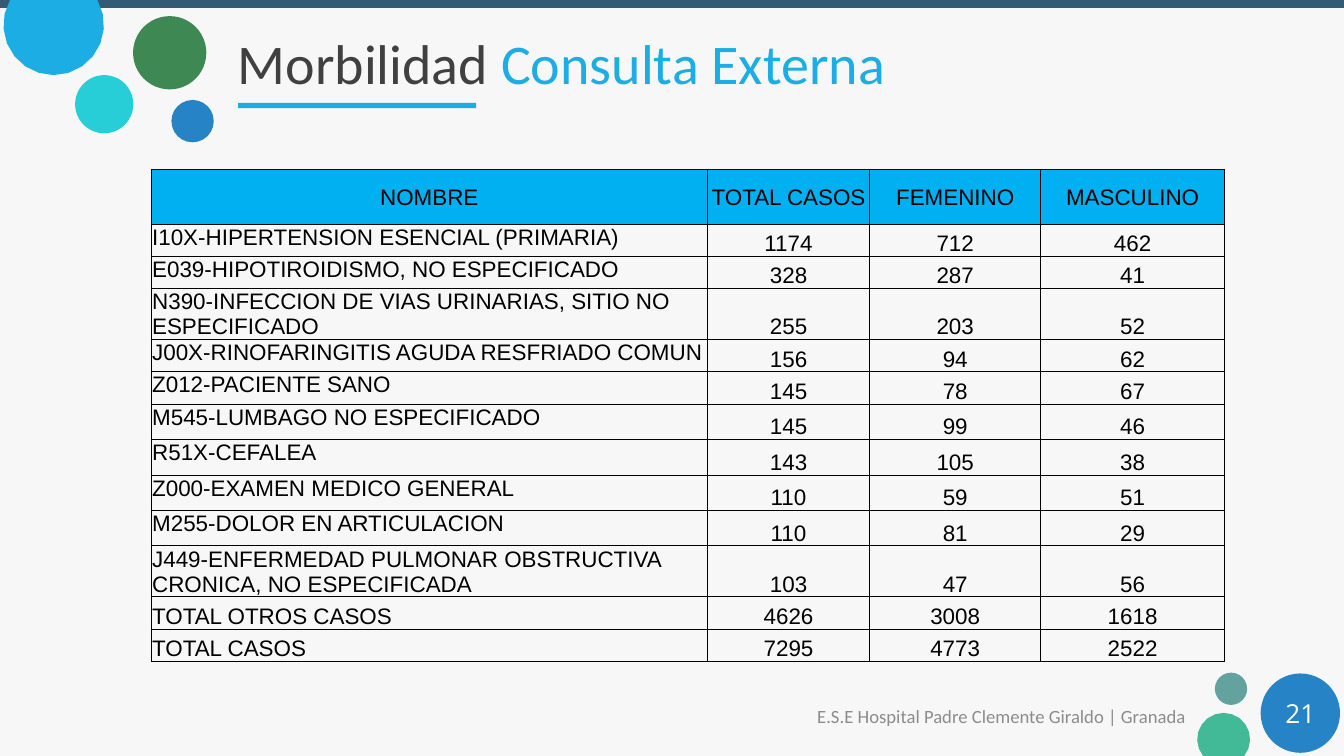
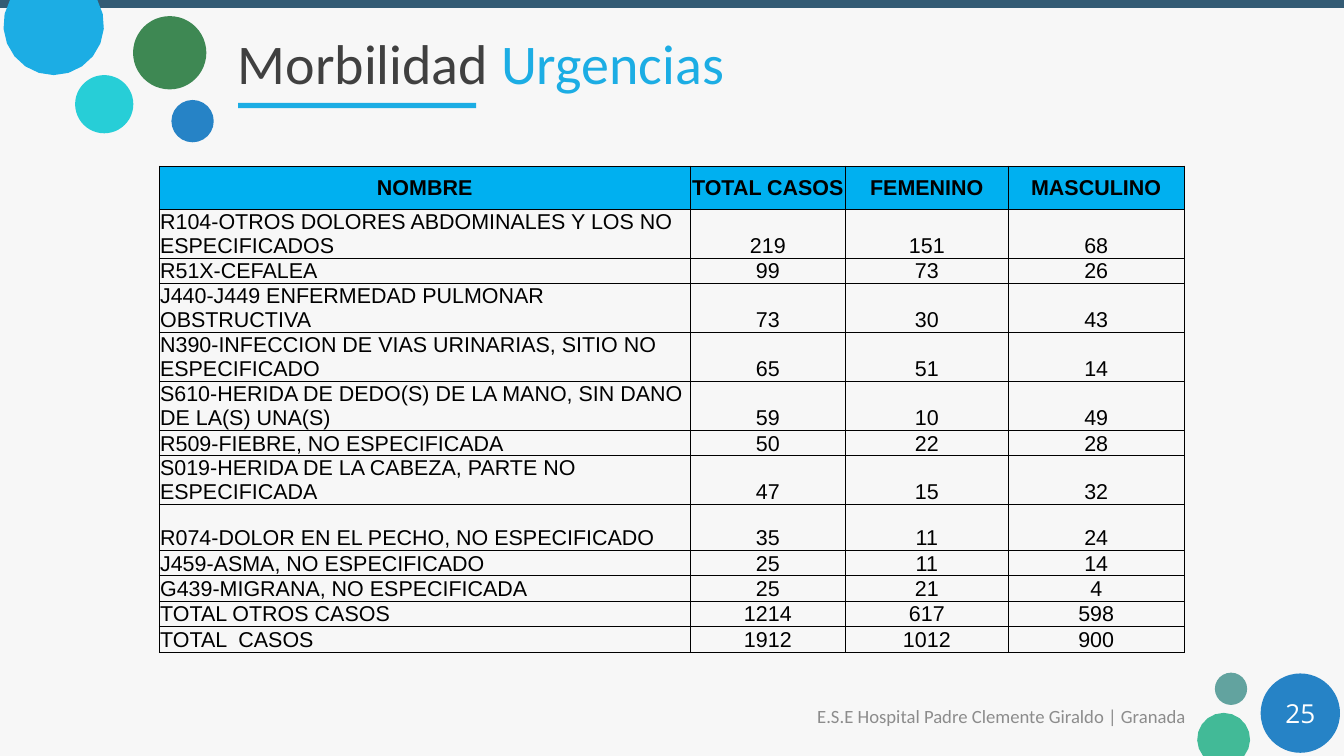
import math
from dataclasses import dataclass

import lxml.etree
import pptx
import pptx.dml.color
import pptx.enum.shapes
import pptx.enum.text
import pptx.oxml.ns
import pptx.util

Cm = pptx.util.Cm
Pt = pptx.util.Pt
qn = pptx.oxml.ns.qn
ALIGN = pptx.enum.text.PP_ALIGN
ANCHOR = pptx.enum.text.MSO_ANCHOR
SHAPE = pptx.enum.shapes.MSO_SHAPE


@dataclass(frozen=True)
class Theme:
    width: float = 50.8
    height: float = 28.58
    background: str = "F7F7F7"
    band: str = "335B74"
    sky: str = "1CADE4"
    blue: str = "2683C6"
    cyan: str = "27CED7"
    green: str = "3E8853"
    sage: str = "62A39F"
    mint: str = "42BA97"
    header: str = "00B0F0"
    title: str = "404040"
    footer: str = "8C8C8C"
    black: str = "000000"
    white: str = "FFFFFF"
    title_size: int = 60
    footer_size: int = 20
    number_size: int = 28
    heading_font: str = "Calibri"
    number_font: str = "Open Sans"
    table_font: str = "Arial"
    table_leading: float = 1.12


def rgb(color):
    return pptx.dml.color.RGBColor.from_string(color)


class Deck:
    """Builds slides that share one theme, keeping track of the current slide."""

    def __init__(self, theme):
        self.theme = theme
        self.presentation = pptx.Presentation()
        self.presentation.slide_width = Cm(theme.width)
        self.presentation.slide_height = Cm(theme.height)
        fill = self.presentation.slide_master.background.fill
        fill.solid()
        fill.fore_color.rgb = rgb(theme.background)
        self.slide = None

    def paint(self, shape, color):
        shape.shadow.inherit = False
        shape.fill.solid()
        shape.fill.fore_color.rgb = rgb(color)
        shape.line.fill.background()

    def shape(self, kind, left, top, width, height, color):
        shape = self.slide.shapes.add_shape(kind, Cm(left), Cm(top), Cm(width), Cm(height))
        self.paint(shape, color)

    def circle(self, left, top, diameter, color):
        self.shape(SHAPE.OVAL, left, top, diameter, diameter, color)

    def cut_circle(self, center_x, center_y, radius, edge, color, segments=14):
        start = math.asin((edge - center_y) / radius)
        sweep = math.pi - 2 * start if edge == 0 else -math.pi - 2 * start
        angles = [start + sweep * step / segments for step in range(segments + 1)]
        points = [(Cm(center_x + radius * math.cos(angle)),
                   Cm(center_y + radius * math.sin(angle))) for angle in angles]
        builder = self.slide.shapes.build_freeform(*points[0])
        builder.add_line_segments(points[1:], close=True)
        self.paint(builder.convert_to_shape(), color)

    def text(self, left, top, width, height, runs, size, font, align=ALIGN.LEFT):
        box = self.slide.shapes.add_textbox(Cm(left), Cm(top), Cm(width), Cm(height))
        frame = box.text_frame
        frame.word_wrap = True
        frame.vertical_anchor = ANCHOR.MIDDLE
        frame.margin_left = frame.margin_right = Cm(0.46)
        frame.margin_top = frame.margin_bottom = Cm(0.23)
        paragraph = frame.paragraphs[0]
        paragraph.alignment = align
        paragraph.font.size = Pt(size)
        paragraph.font.name = font
        for content, color in runs:
            run = paragraph.add_run()
            run.text = content
            run.font.color.rgb = rgb(color)

    def page(self, topic, number):
        theme = self.theme
        self.slide = self.presentation.slides.add_slide(self.presentation.slide_layouts[6])
        self.shape(SHAPE.RECTANGLE, 0, 0, theme.width, 0.3, theme.band)
        self.circle(6.48, 3.78, 1.6, theme.blue)
        self.cut_circle(2.03, 0.94, 1.9, 0, theme.sky)
        self.circle(2.84, 2.84, 2.2, theme.cyan)
        self.circle(5.03, 0.61, 2.77, theme.green)
        self.circle(45.92, 25.43, 1.22, theme.sage)
        self.circle(47.65, 25.46, 3, theme.blue)
        self.cut_circle(46.25, 27.95, 1, theme.height, theme.mint)
        self.shape(SHAPE.RECTANGLE, 9, 3.89, 9, 0.2, theme.sky)
        self.text(8.53, 0.69, 39.85, 3.35,
                  [("Morbilidad ", theme.title), (topic, theme.sky)],
                  theme.title_size, theme.heading_font)
        self.text(29.2, 26.31, 16.08, 1.52,
                  [("E.S.E Hospital Padre Clemente Giraldo | Granada", theme.footer)],
                  theme.footer_size, theme.heading_font, ALIGN.RIGHT)
        self.text(47.65, 26.21, 3, 1.52, [(str(number), theme.white)],
                  theme.number_size, theme.number_font, ALIGN.CENTER)

    def borders(self, cell):
        properties = cell._tc.get_or_add_tcPr()
        for index, side in enumerate(("a:lnL", "a:lnR", "a:lnT", "a:lnB")):
            line = lxml.etree.Element(qn(side), w=str(Pt(1)))
            fill = lxml.etree.SubElement(line, qn("a:solidFill"))
            lxml.etree.SubElement(fill, qn("a:srgbClr"), val=self.theme.black)
            properties.insert(index, line)

    def cell(self, cell, content, size, align, anchor, is_header, bold):
        cell.margin_left = cell.margin_right = cell.margin_top = Cm(0.03)
        cell.margin_bottom = 0
        cell.vertical_anchor = anchor
        if is_header:
            cell.fill.solid()
            cell.fill.fore_color.rgb = rgb(self.theme.header)
        else:
            cell.fill.background()
        self.borders(cell)
        cell.text = str(content)
        paragraph = cell.text_frame.paragraphs[0]
        paragraph.alignment = align
        paragraph.line_spacing = Pt(size * self.theme.table_leading)
        paragraph.font.size = Pt(size)
        paragraph.font.name = self.theme.table_font
        paragraph.font.bold = bold
        paragraph.font.color.rgb = rgb(self.theme.black)

    def table(self, left, top, widths, heights, cases, size, bold_header, name_anchor):
        rows = [("NOMBRE", "TOTAL CASOS", "FEMENINO", "MASCULINO"), *cases]
        table = self.slide.shapes.add_table(
            len(rows), len(widths), Cm(left), Cm(top), Cm(sum(widths)), Cm(sum(heights))).table
        table.first_row = table.horz_banding = False
        for column, width in zip(table.columns, widths):
            column.width = Cm(width)
        for row_index, (values, height) in enumerate(zip(rows, heights)):
            table.rows[row_index].height = Cm(height)
            is_header = row_index == 0
            is_total = values[0].startswith("TOTAL")
            for column_index, value in enumerate(values):
                is_name = column_index == 0 and not is_header
                anchor = ANCHOR.MIDDLE if is_header else ANCHOR.BOTTOM
                if is_name and not is_total:
                    anchor = name_anchor
                self.cell(table.cell(row_index, column_index), value, size,
                          ALIGN.LEFT if is_name else ALIGN.CENTER,
                          anchor, is_header, is_header and bold_header)


OUTPATIENT_CASES = [
    ("I10X-HIPERTENSION ESENCIAL (PRIMARIA)", 1174, 712, 462),
    ("E039-HIPOTIROIDISMO, NO ESPECIFICADO", 328, 287, 41),
    ("N390-INFECCION DE VIAS URINARIAS, SITIO NO ESPECIFICADO", 255, 203, 52),
    ("J00X-RINOFARINGITIS AGUDA RESFRIADO COMUN", 156, 94, 62),
    ("Z012-PACIENTE SANO", 145, 78, 67),
    ("M545-LUMBAGO NO ESPECIFICADO", 145, 99, 46),
    ("R51X-CEFALEA", 143, 105, 38),
    ("Z000-EXAMEN MEDICO GENERAL", 110, 59, 51),
    ("M255-DOLOR EN ARTICULACION", 110, 81, 29),
    ("J449-ENFERMEDAD PULMONAR OBSTRUCTIVA CRONICA, NO ESPECIFICADA", 103, 47, 56),
    ("TOTAL OTROS CASOS", 4626, 3008, 1618),
    ("TOTAL CASOS", 7295, 4773, 2522),
]

EMERGENCY_CASES = [
    ("R104-OTROS DOLORES ABDOMINALES Y LOS NO ESPECIFICADOS", 219, 151, 68),
    ("R51X-CEFALEA", 99, 73, 26),
    ("J440-J449 ENFERMEDAD PULMONAR OBSTRUCTIVA", 73, 30, 43),
    ("N390-INFECCION DE VIAS URINARIAS, SITIO NO ESPECIFICADO", 65, 51, 14),
    ("S610-HERIDA DE DEDO(S) DE LA MANO, SIN DANO DE LA(S) UNA(S)", 59, 10, 49),
    ("R509-FIEBRE, NO ESPECIFICADA", 50, 22, 28),
    ("S019-HERIDA DE LA CABEZA, PARTE NO ESPECIFICADA", 47, 15, 32),
    ("R074-DOLOR EN EL PECHO, NO ESPECIFICADO", 35, 11, 24),
    ("J459-ASMA, NO ESPECIFICADO", 25, 11, 14),
    ("G439-MIGRANA, NO ESPECIFICADA", 25, 21, 4),
    ("TOTAL OTROS CASOS", 1214, 617, 598),
    ("TOTAL  CASOS", 1912, 1012, 900),
]


def main():
    deck = Deck(Theme())

    deck.page("Consulta Externa", 21)
    single, medium, double = 1.22, 1.34, 1.83
    heights = [2.06, single, single, double, single, single,
               *[medium] * 4, double, single, single]
    deck.table(5.72, 6.41, [21.01, 6.15, 6.45, 6.96], heights,
               OUTPATIENT_CASES, 24, False, ANCHOR.TOP)

    deck.page("Urgencias", 25)
    single, double = 0.96, 1.73
    heights = [1.63, double, single, *[double] * 3, single,
               double, double, *[single] * 4]
    deck.table(6.02, 6.28, [20.07, 5.87, 6.15, 6.65], heights,
               EMERGENCY_CASES, 23, True, ANCHOR.BOTTOM)

    deck.presentation.save("out.pptx")


if __name__ == "__main__":
    main()
